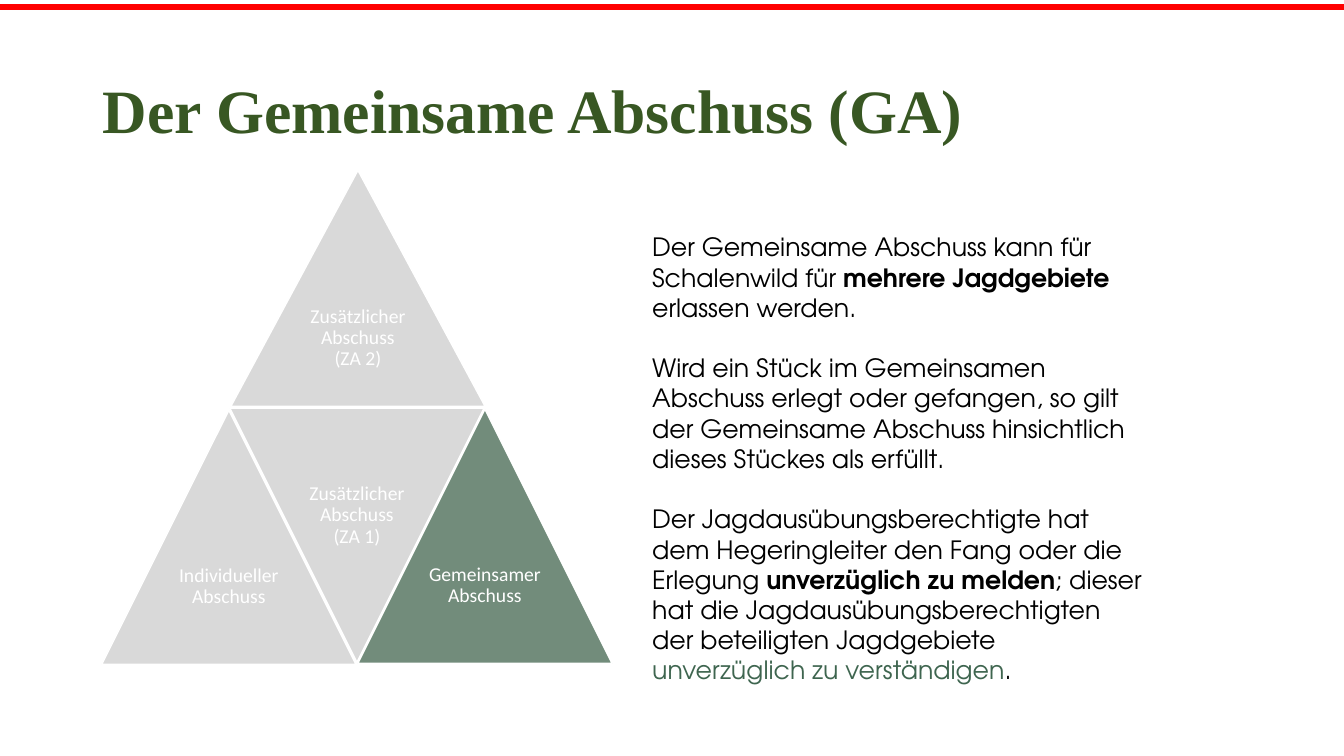
import dataclasses

import pptx
import pptx.dml.color
import pptx.enum.shapes
import pptx.enum.text
import pptx.oxml
import pptx.util


@dataclasses.dataclass(frozen=True)
class Theme:
    red: str = "FF0000"
    title_green: str = "385723"
    accent_green: str = "3E654F"
    triangle_green: str = "728C7B"
    grey: str = "D9D9D9"
    white: str = "FFFFFF"
    black: str = "000000"
    title_font: str = "Times New Roman"
    body_font: str = "TeX Gyre Adventor"
    label_font: str = "Calibri"
    title_size: int = 44
    body_size: int = 18
    label_size: int = 14


theme = Theme()
PX = 9144
MIDDLE = pptx.enum.text.MSO_ANCHOR.MIDDLE
TOP = pptx.enum.text.MSO_ANCHOR.TOP


def rgb(value):
    return pptx.dml.color.RGBColor.from_string(value)


def add_text(paragraph, text, *, font, size, color, bold=False):
    for index, line in enumerate(text.split("\n")):
        if index:
            paragraph.add_line_break()
        run = paragraph.add_run()
        run.text = line
        run.font.name = font
        run.font.size = pptx.util.Pt(size)
        run.font.bold = bold
        run.font.color.rgb = rgb(color)


presentation = pptx.Presentation()
presentation.slide_width = 1333 * PX
presentation.slide_height = 750 * PX
slide = presentation.slides.add_slide(presentation.slide_layouts[5])

top_rule = slide.shapes.add_connector(
    pptx.enum.shapes.MSO_CONNECTOR.STRAIGHT, 0, 7 * PX, 1333 * PX, 7 * PX)
top_rule.line.color.rgb = rgb(theme.red)
top_rule.line.width = pptx.util.Pt(4.5)
top_rule._element.spPr.append(pptx.oxml.parse_xml(
    '<a:effectLst xmlns:a="http://schemas.openxmlformats.org/drawingml/2006/main"/>'))

title = slide.shapes.title
title.left, title.top, title.width, title.height = 92 * PX, 40 * PX, 1150 * PX, 145 * PX
title.text_frame.auto_size = pptx.enum.text.MSO_AUTO_SIZE.NONE
title.text_frame.vertical_anchor = MIDDLE
paragraph = title.text_frame.paragraphs[0]
paragraph.alignment = pptx.enum.text.PP_ALIGN.LEFT
paragraph.line_spacing = 0.9
add_text(paragraph, "Der Gemeinsame Abschuss (GA)", font=theme.title_font,
         size=theme.title_size, color=theme.title_green, bold=True)

body_paragraphs = [
    [("Der Gemeinsame Abschuss kann für Schalenwild für ", {}),
     ("mehrere Jagdgebiete ", {"bold": True}),
     ("erlassen werden.", {})],
    [("Wird ein Stück im Gemeinsamen Abschuss erlegt oder gefangen, so gilt "
      "der Gemeinsame Abschuss hinsichtlich dieses Stückes als erfüllt.", {})],
    [("Der Jagdausübungsberechtigte hat dem Hegeringleiter den Fang oder die Erlegung ", {}),
     ("unverzüglich zu melden", {"bold": True}),
     ("; dieser hat die Jagdausübungsberechtigten der beteiligten Jagdgebiete ", {}),
     ("unverzüglich zu verständigen", {"color": theme.accent_green}),
     (".", {})],
]
body = slide.shapes.add_textbox(637 * PX, 225 * PX, 511 * PX, 434 * PX)
body.text_frame.word_wrap = True
body.text_frame.auto_size = pptx.enum.text.MSO_AUTO_SIZE.SHAPE_TO_FIT_TEXT
for index, runs in enumerate(body_paragraphs):
    paragraph = body.text_frame.paragraphs[0]
    if index:
        paragraph = body.text_frame.add_paragraph()
        paragraph.space_before = pptx.util.Pt(21.5)
    for text, changes in runs:
        look = {"font": theme.body_font, "size": theme.body_size, "color": theme.black}
        add_text(paragraph, text, **(look | changes))

TRIANGLE_WIDTH = 252
triangles = [
    (229, 403, 169, 135, theme.grey, "Zusätzlicher Abschuss\n(ZA 2)"),
    (101, 659, 407, 154, theme.grey, "Individueller Abschuss"),
    (228, 405, 657, 75, theme.grey, "Zusätzlicher Abschuss\n(ZA 1)"),
    (355, 658, 406, 154, theme.triangle_green, "Gemeinsamer Abschuss"),
]
for left, base, tip, label_offset, color, label in triangles:
    builder = slide.shapes.build_freeform(left, base, scale=PX)
    builder.add_line_segments(
        [(left + TRIANGLE_WIDTH // 2, tip), (left + TRIANGLE_WIDTH, base)], close=True)
    triangle = builder.convert_to_shape()
    triangle.shadow.inherit = False
    triangle.fill.solid()
    triangle.fill.fore_color.rgb = rgb(color)
    triangle.line.color.rgb = rgb(theme.white)
    triangle.line.width = pptx.util.Pt(1)
    frame = triangle.text_frame
    frame.word_wrap = True
    frame.vertical_anchor = TOP
    frame.margin_left = frame.margin_right = 69 * PX
    frame.margin_top = label_offset * PX
    frame.margin_bottom = 0
    paragraph = frame.paragraphs[0]
    paragraph.alignment = pptx.enum.text.PP_ALIGN.CENTER
    paragraph.line_spacing = 0.9
    add_text(paragraph, label, font=theme.label_font,
             size=theme.label_size, color=theme.white)

presentation.save("out.pptx")
